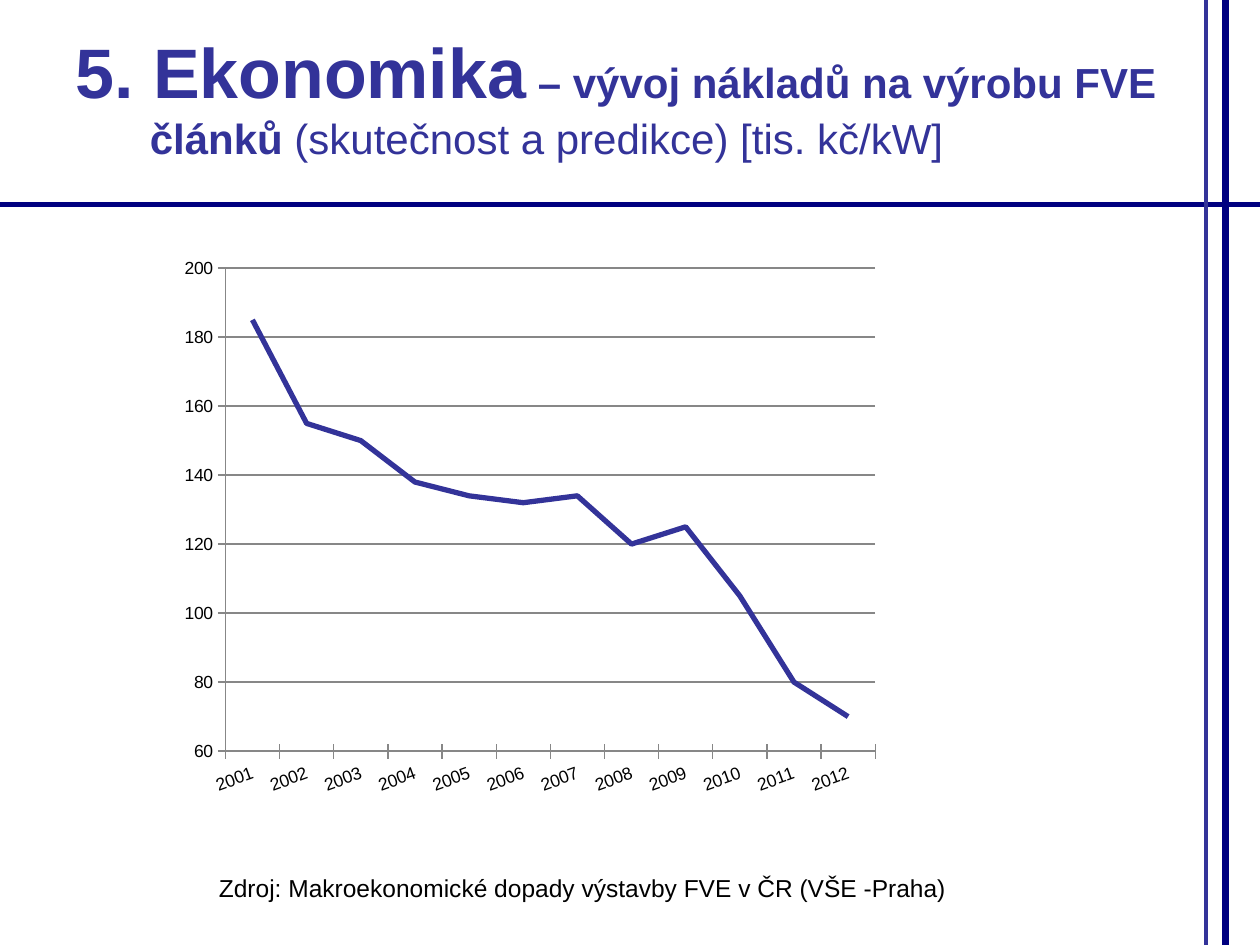
from lxml import etree
from pptx import Presentation
from pptx.chart.data import CategoryChartData
from pptx.dml.color import RGBColor
from pptx.enum.chart import XL_CHART_TYPE, XL_TICK_MARK
from pptx.enum.shapes import MSO_CONNECTOR
from pptx.enum.text import MSO_ANCHOR
from pptx.oxml import parse_xml
from pptx.oxml.ns import nsdecls, qn
from pptx.util import Pt

LINE_CHART = XL_CHART_TYPE.LINE
CROSS = XL_TICK_MARK.CROSS
STRAIGHT = MSO_CONNECTOR.STRAIGHT
TOP, MIDDLE = MSO_ANCHOR.TOP, MSO_ANCHOR.MIDDLE
NAVY = RGBColor(0x00, 0x00, 0x80)
INDIGO = RGBColor(0x33, 0x33, 0x99)
GRAY = RGBColor(0x87, 0x87, 0x87)
BLACK = RGBColor(0x00, 0x00, 0x00)
WIDTH, HEIGHT = 720, 540


class Deck:
    font = "Arial"

    def __init__(self):
        self.prs = Presentation()
        self.prs.slide_width, self.prs.slide_height = Pt(WIDTH), Pt(HEIGHT)
        self.s = self.prs.slides.add_slide(self.prs.slide_layouts[6])

    def line(self, x1, y1, x2, y2, color, width):
        c = self.s.shapes.add_connector(STRAIGHT, Pt(x1), Pt(y1), Pt(x2), Pt(y2))
        c.line.color.rgb = color
        c.line.width = Pt(width)
        etree.SubElement(c._element.spPr, qn("a:effectLst"))

    def text(self, x, y, w, h, runs, color, anchor=TOP, hanging=0, bottom=3.6):
        sp = self.s.shapes.add_textbox(Pt(x), Pt(y), Pt(w), Pt(h))
        tf = sp.text_frame
        tf.word_wrap = True
        tf.vertical_anchor = anchor
        tf.margin_bottom = Pt(bottom)
        p = tf.paragraphs[0]
        if hanging:
            pPr = p._p.get_or_add_pPr()
            pPr.set("marL", str(Pt(hanging)))
            pPr.set("indent", str(-Pt(hanging)))
        for words, size, bold in runs:
            r = p.add_run()
            r.text = words
            r.font.name = self.font
            r.font.size = Pt(size)
            r.font.bold = bold
            r.font.color.rgb = color

    def line_chart(self, x, y, w, h, name, cats, vals, color, low, high, step, plot):
        data = CategoryChartData()
        data.categories = cats
        data.add_series(name, vals)
        chart = self.s.shapes.add_chart(LINE_CHART, Pt(x), Pt(y), Pt(w), Pt(h), data).chart
        chart.has_legend = False
        chart.has_title = False
        chart.font.name = self.font
        chart.font.size = Pt(10)
        chart.font.color.rgb = BLACK
        chart.plots[0].vary_by_categories = False
        series = chart.plots[0].series[0]
        series.smooth = False
        series.format.line.color.rgb = color
        series.format.line.width = Pt(3)
        cat, val = chart.category_axis, chart.value_axis
        for axis in (cat, val):
            axis.major_tick_mark = CROSS
            axis.format.line.color.rgb = GRAY
            axis.format.line.width = Pt(0.75)
            axis.tick_labels.font.size = Pt(10)
        cat.tick_labels.font._element.getparent().getparent().getparent().find(
            qn("a:bodyPr")).set("rot", "-1200000")
        val.minimum_scale, val.maximum_scale, val.major_unit = low, high, step
        val.has_major_gridlines = True
        val.major_gridlines.format.line.color.rgb = GRAY
        val.major_gridlines.format.line.width = Pt(0.75)
        area = chart._chartSpace.chart.plotArea
        for old in area.findall(qn("c:layout")):
            area.remove(old)
        sizes = "".join(f'<c:{k} val="{v}"/>' for k, v in zip("xywh", plot))
        area.insert(0, parse_xml(
            f'<c:layout {nsdecls("c")}><c:manualLayout><c:layoutTarget val="inner"/>'
            f'<c:xMode val="edge"/><c:yMode val="edge"/>{sizes}'
            '</c:manualLayout></c:layout>'))


def main():
    deck = Deck()
    deck.line(0, 116.8, WIDTH, 116.8, NAVY, 2.5)
    deck.line(689, 0, 689, HEIGHT, INDIGO, 2.5)
    deck.line(700.4, 0, 700.4, HEIGHT, NAVY, 4)
    deck.text(118, 495.2, 512, 24,
              [("Zdroj: Makroekonomické dopady výstavby FVE v ČR (VŠE -Praha)", 14, False)],
              BLACK)
    costs = [185, 155, 150, 138, 134, 132, 134, 120, 125, 105, 80, 70]
    years = [str(2001 + i) for i in range(len(costs))]
    deck.line_chart(95.8, 140.4, 412.6, 321, "Series 1", years, costs, INDIGO,
                    60, 200, 20, (0.08, 0.04, 0.9, 0.86))
    deck.text(36, 21.6, 647.3, 90,
              [("5. Ekonomika", 40, True),
               (" – vývoj nákladů na výrobu FVE článků ", 24, True),
               ("(skutečnost a predikce) [tis. kč/kW]", 24, False)],
              INDIGO, anchor=MIDDLE, hanging=42.5, bottom=27)
    deck.prs.save("out.pptx")


if __name__ == "__main__":
    main()
